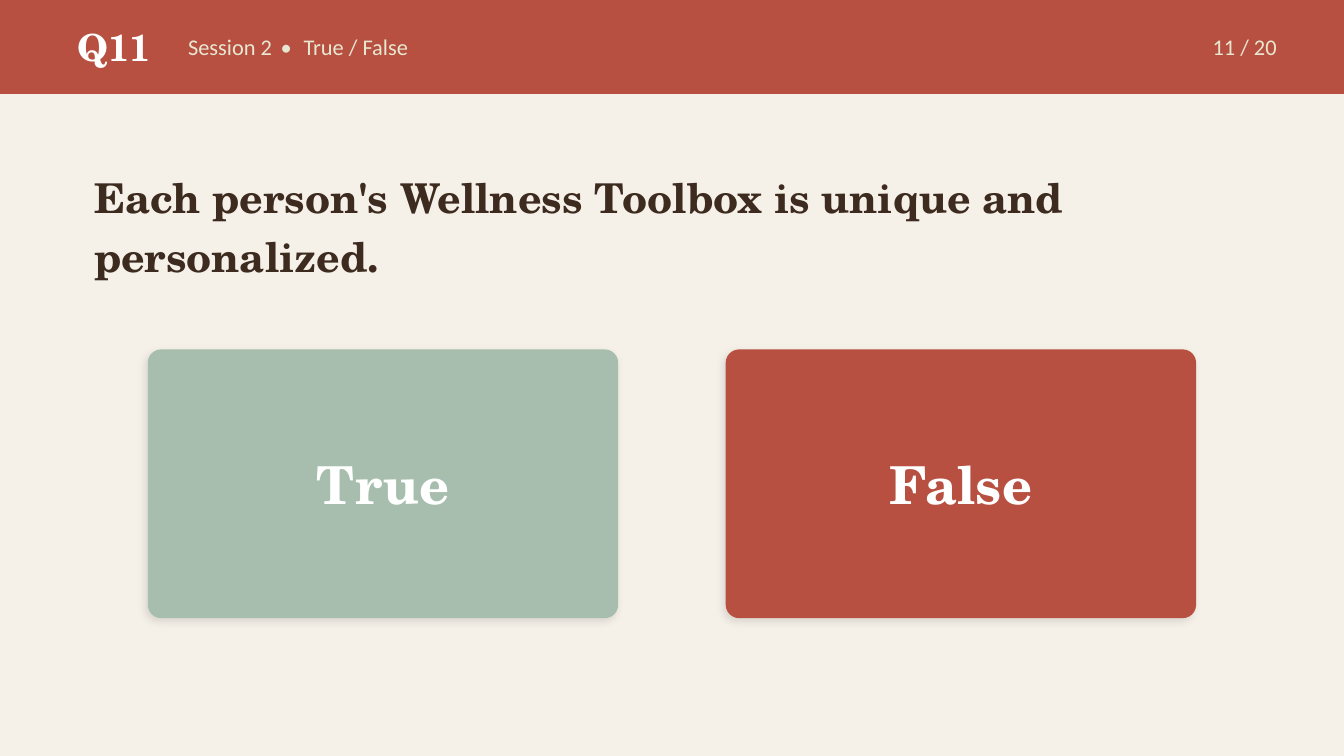
from lxml import etree
from pptx import Presentation
from pptx.dml.color import RGBColor
from pptx.enum.shapes import MSO_SHAPE
from pptx.enum.text import MSO_ANCHOR, MSO_AUTO_SIZE, PP_ALIGN
from pptx.oxml.ns import qn
from pptx.util import Inches, Pt

RECT, ROUNDED = MSO_SHAPE.RECTANGLE, MSO_SHAPE.ROUNDED_RECTANGLE
LEFT, CENTER, RIGHT = PP_ALIGN.LEFT, PP_ALIGN.CENTER, PP_ALIGN.RIGHT
MIDDLE, NO_FIT = MSO_ANCHOR.MIDDLE, MSO_AUTO_SIZE.NONE
TITLE_ONLY = 5

CLAY, SAGE, SAND = "B85042", "A7BEAE", "E7E8D1"
CREAM, BROWN, WHITE = "F5F0E8", "3D2B1F", "FFFFFF"
SERIF, SANS = "TeX Gyre Schola", "Calibri"
WIDTH, HEIGHT = 10, 10 * 9 / 16
CELL = 0.1  # grid step in inches


def color(hex_code):
    return RGBColor.from_string(hex_code)


class QuizSlide:
    def __init__(self, deck):
        self.slide = deck.slides.add_slide(deck.slide_layouts[TITLE_ONLY])
        background = self.slide.background.fill
        background.solid()
        background.fore_color.rgb = color(CREAM)

    def area(self, col, row, cols, rows):
        return [Inches(n * CELL) for n in (col, row, cols, rows)]

    def set_text(self, shape, runs, size, ink, font=SANS, bold=False, align=LEFT):
        """Each run is a pair of text and letter spacing in points."""
        frame = shape.text_frame
        frame.word_wrap, frame.auto_size = True, NO_FIT
        frame.vertical_anchor = MIDDLE
        frame.margin_left = frame.margin_right = 0
        frame.margin_top = frame.margin_bottom = 0
        paragraph = frame.paragraphs[0]
        paragraph.alignment = align
        for text, spacing in runs:
            run = paragraph.add_run()
            run.text = text
            run.font.name, run.font.size, run.font.bold = font, Pt(size), bold
            run.font.color.rgb = color(ink)
            if spacing:
                run.font._element.set("spc", str(round(spacing * 100)))
        return paragraph

    def block(self, kind, area, fill):
        shape = self.slide.shapes.add_shape(kind, *self.area(*area))
        shape.shadow.inherit = False
        shape.fill.solid()
        shape.fill.fore_color.rgb = color(fill)
        shape.line.fill.background()
        return shape

    def label(self, area, runs, size, ink, **style):
        box = self.slide.shapes.add_textbox(*self.area(*area))
        self.set_text(box, runs, size, ink, **style)

    def question(self, area, text):
        title = self.slide.shapes.title
        title.left, title.top, title.width, title.height = self.area(*area)
        paragraph = self.set_text(title, [(text, 0)], 22, BROWN, SERIF, True)
        paragraph.line_spacing = 1.2

    def answer(self, area, text, fill):
        card = self.block(ROUNDED, area, fill)
        card.adjustments[0] = 0.05
        self.soft_shadow(card)
        self.set_text(card, [(text, 0)], 28, WHITE, SERIF, True, CENTER)

    def soft_shadow(self, shape):
        effects = shape._element.spPr.find(qn("a:effectLst"))
        shadow = etree.SubElement(
            effects, qn("a:outerShdw"), blurRad=str(Pt(4)), dist=str(Pt(2)),
            dir=str(135 * 60000), algn="bl", rotWithShape="0")
        black = etree.SubElement(shadow, qn("a:srgbClr"), val="000000")
        etree.SubElement(black, qn("a:alpha"), val="10000")


def main():
    deck = Presentation()
    deck.slide_width, deck.slide_height = Inches(WIDTH), Inches(HEIGHT)
    quiz = QuizSlide(deck)

    # Header band: question number, session and progress
    quiz.block(RECT, (0, 0, 100, 7), CLAY)
    quiz.label((5, 0.8, 7, 5.4), [("Q11", 0)], 20, WHITE,
               font=SERIF, bold=True, align=CENTER)
    session = [("Session 2", 0), (" • ", 1.8), ("True / False", 0)]
    quiz.label((14, 0.8, 50, 5.4), session, 12, SAND)
    quiz.label((80, 0.8, 15, 5.4), [("11 / 20", 0)], 12, SAND, align=RIGHT)

    # Statement to judge
    quiz.question((7, 11, 86, 11),
                  "Each person's Wellness Toolbox is unique and personalized.")

    # Answer cards, centred as a pair
    card_cols, gap = 35, 8
    first_col = (100 - 2 * card_cols - gap) / 2
    for i, (answer, fill) in enumerate([("True", SAGE), ("False", CLAY)]):
        col = first_col + i * (card_cols + gap)
        quiz.answer((col, 26, card_cols, 20), answer, fill)

    deck.save("out.pptx")


if __name__ == "__main__":
    main()
